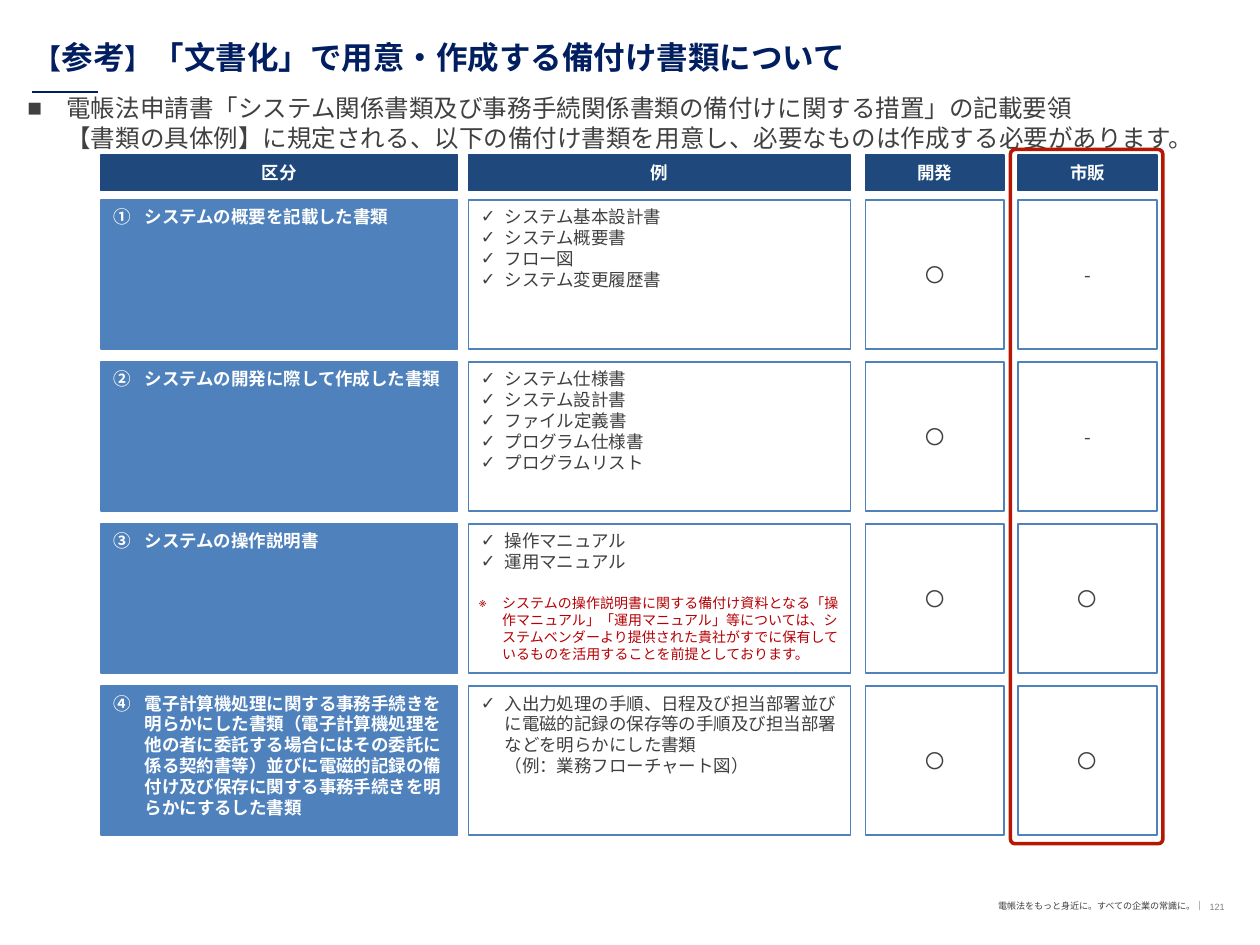
"""Builds the slide on the documents to be kept for the electronic bookkeeping law."""
from lxml import etree
from pptx import Presentation
from pptx.dml.color import RGBColor
from pptx.enum.shapes import MSO_CONNECTOR, MSO_SHAPE
from pptx.enum.text import MSO_ANCHOR, PP_ALIGN
from pptx.oxml.ns import qn
from pptx.util import Pt

RECT, ROUNDED = MSO_SHAPE.RECTANGLE, MSO_SHAPE.ROUNDED_RECTANGLE
TOP, MIDDLE = MSO_ANCHOR.TOP, MSO_ANCHOR.MIDDLE
LEFT, CENTER, RIGHT = PP_ALIGN.LEFT, PP_ALIGN.CENTER, PP_ALIGN.RIGHT
STRAIGHT = MSO_CONNECTOR.STRAIGHT
SANS, LATIN = "Noto Sans CJK JP", "Arial"
COLORS = {"title": "001E60", "rule": "001F60", "text": "404040", "page": "808080",
          "header": "1F497D", "blue": "4F81BD", "white": "FFFFFF",
          "highlight": "B61703", "note": "B60005"}

deck = Presentation()
deck.slide_width, deck.slide_height = Pt(720), Pt(540)
slide = deck.slides.add_slide(deck.slide_layouts[6])


def write(paragraph, text, size=10, color="text", bold=False, font=SANS, align=LEFT,
          bullet=None, number=None, indent=0):
    properties = paragraph._p.get_or_add_pPr()
    if indent:
        properties.set("marL", str(Pt(indent)))
        properties.set("indent", str(-Pt(indent)))
    if number:
        etree.SubElement(properties, qn("a:buAutoNum"), type="circleNumDbPlain",
                         startAt=str(number))
    if bullet:
        etree.SubElement(properties, qn("a:buFont"), typeface=LATIN)
        etree.SubElement(properties, qn("a:buChar"), char=bullet)
    paragraph.alignment = align
    paragraph.line_spacing = Pt(size * 1.2)
    for index, line in enumerate(text.split("\n")):
        if index:
            paragraph.add_line_break()
        run = paragraph.add_run()
        run.text = line
        run.font.size, run.font.bold, run.font.name = Pt(size), bold, font
        run.font.color.rgb = RGBColor.from_string(COLORS[color])
        etree.SubElement(run._r.get_or_add_rPr(), qn("a:ea"), typeface=font)


def add_box(left, top, width, height, kind=None, fill=None, line="blue", weight=1,
            anchor=TOP, wrap=True):
    place = Pt(left), Pt(top), Pt(width), Pt(height)
    if kind is None:
        box = slide.shapes.add_textbox(*place)
    else:
        box = slide.shapes.add_shape(kind, *place)
        box.shadow.inherit = False
        box.line.color.rgb = RGBColor.from_string(COLORS[line])
        box.line.width = Pt(weight)
        if fill:
            box.fill.solid()
            box.fill.fore_color.rgb = RGBColor.from_string(COLORS[fill])
        else:
            box.fill.background()
    box.text_frame.word_wrap = wrap
    box.text_frame.vertical_anchor = anchor
    return box


page = add_box(670.3, 509.8, 40.3, 17.3, anchor=MIDDLE).text_frame
page.margin_left = page.margin_top = page.margin_bottom = 0
page.margin_right = Pt(10.8)
write(page.paragraphs[0], "121", size=5.2, color="page", font=LATIN, align=RIGHT)

title_rule = slide.shapes.add_connector(STRAIGHT, Pt(18), Pt(52.6), Pt(56.2), Pt(52.6))
title_rule.line.color.rgb = RGBColor.from_string(COLORS["rule"])
title_rule.line.width = Pt(1)
etree.SubElement(title_rule._element.spPr, qn("a:effectLst"))

slogan = add_box(558.7, 511.2, 136.8, 13.7).text_frame
write(slogan.paragraphs[0], "電帳法をもっと身近に。すべての企業の常識に。｜", size=5.2, align=RIGHT)

title = add_box(12.2, 18, 707.8, 35.3).text_frame
for part, size, font in [("【", 16, LATIN), ("参考", 18, LATIN), ("】", 16, LATIN),
                         ("「文書化」で用意・作成する備付け書類について", 18, SANS)]:
    write(title.paragraphs[0], part, size=size, font=font, color="title", bold=True)

lead = add_box(8.6, 49.7, 705.6, 53.3).text_frame
write(lead.paragraphs[0],
      "電帳法申請書「システム関係書類及び事務手続関係書類の備付けに関する措置」の記載要領\n"
      "【書類の具体例】に規定される、以下の備付け書類を用意し、必要なものは作成する必要があります。",
      size=14, bullet="■", indent=22.3)

columns = [("区分", 57.6, 203.8), ("例", 267.8, 218.2),
           ("開発", 494.6, 79.2), ("市販", 581.8, 79.2)]
for heading, left, width in columns:
    header = add_box(left, 88.6, width, 20.2, RECT, "header", "header",
                     anchor=MIDDLE, wrap=False)
    write(header.text_frame.paragraphs[0], heading, color="white", bold=True, align=CENTER)

categories = [
    ("システムの概要を記載した書類",
     ["システム基本設計書", "システム概要書", "フロー図", "システム変更履歴書"], "〇", "-"),
    ("システムの開発に際して作成した書類",
     ["システム仕様書", "システム設計書", "ファイル定義書", "プログラム仕様書",
      "プログラムリスト"], "〇", "-"),
    ("システムの操作説明書", ["操作マニュアル", "運用マニュアル"], "〇", "〇"),
    ("電子計算機処理に関する事務手続きを明らかにした書類（電子計算機処理を他の者に委託する場合には"
     "その委託に係る契約書等）並びに電磁的記録の備付け及び保存に関する事務手続きを明らかにするした書類",
     ["入出力処理の手順、日程及び担当部署並びに電磁的記録の保存等の手順及び担当部署などを明らかにした書類\n"
      "（例：業務フローチャート図）"], "〇", "〇"),
]
for row, (category, examples, *marks) in enumerate(categories):
    top = 114.4 + 92.6 * row
    cells = [add_box(left, top, width, 85, RECT, "white" if column else "blue",
                     anchor=MIDDLE if column > 1 else TOP).text_frame
             for column, (_, left, width) in enumerate(columns)]
    write(cells[0].paragraphs[0], category, color="white", bold=True,
          number=row + 1, indent=18)
    for index, example in enumerate(examples):
        entry = cells[1].add_paragraph() if index else cells[1].paragraphs[0]
        write(entry, example, bullet="✓", indent=13.5)
    for cell, mark in zip(cells[2:], marks):
        write(cell.paragraphs[0], mark, size=11, align=CENTER)

highlight = add_box(577.4, 85.4, 87.1, 396.7, ROUNDED, line="highlight", weight=2)
highlight.adjustments[0] = 0.03

note = add_box(266.4, 336.2, 221, 42.5).text_frame
write(note.paragraphs[0],
      "システムの操作説明書に関する備付け資料となる「操作マニュアル」「運用マニュアル」等については、"
      "システムベンダーより提供された貴社がすでに保有しているものを活用することを前提としております。",
      size=8, color="note", bullet="※", indent=13.5)

deck.save("out.pptx")
